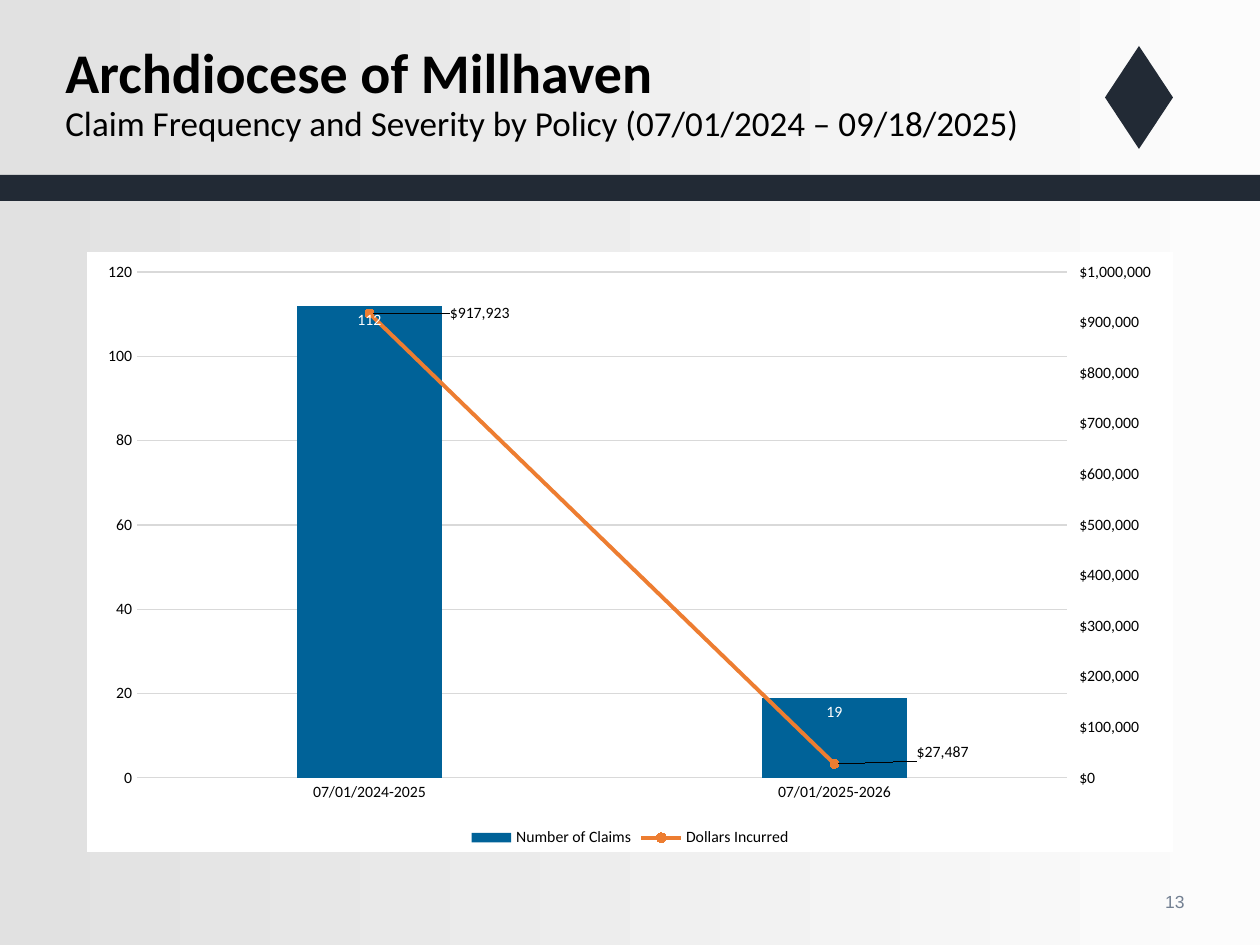
from pptx import Presentation
from pptx.chart.axis import ValueAxis
from pptx.chart.data import CategoryChartData
from pptx.dml.color import RGBColor
from pptx.enum.chart import (XL_CHART_TYPE, XL_LABEL_POSITION,
                             XL_LEGEND_POSITION, XL_MARKER_STYLE, XL_TICK_MARK)
from pptx.enum.shapes import MSO_SHAPE
from pptx.enum.text import MSO_ANCHOR, PP_ALIGN
from pptx.oxml import parse_xml
from pptx.oxml.ns import nsdecls, qn
from pptx.util import Pt

COLUMN = XL_CHART_TYPE.COLUMN_CLUSTERED
BOTTOM = XL_LEGEND_POSITION.BOTTOM
IN_END, RIGHT = XL_LABEL_POSITION.INSIDE_END, XL_LABEL_POSITION.RIGHT
NO_TICK, TICK_OUT = XL_TICK_MARK.NONE, XL_TICK_MARK.OUTSIDE
CIRCLE = XL_MARKER_STYLE.CIRCLE
RECT, DIAMOND = MSO_SHAPE.RECTANGLE, MSO_SHAPE.DIAMOND
MIDDLE, TO_RIGHT = MSO_ANCHOR.MIDDLE, PP_ALIGN.RIGHT

BLACK = RGBColor(0x00, 0x00, 0x00)
WHITE = RGBColor(0xFF, 0xFF, 0xFF)
NAVY = RGBColor(0x22, 0x2A, 0x35)
NUMBER = RGBColor(0x73, 0x80, 0x92)
GRID = RGBColor(0xD9, 0xD9, 0xD9)
BLUE = RGBColor(0x00, 0x62, 0x98)
ORANGE = RGBColor(0xED, 0x7D, 0x31)
SHADES = RGBColor(0xE1, 0xE1, 0xE1), RGBColor(0xFC, 0xFC, 0xFC)

PX = 914400 / 126
WIDE, HIGH = 1086, 600  # chart size in px
DOLLARS = '"$"#,##0'


def box(*sides):
    return [round(side * PX) for side in sides]


def style(font, size, color, name="Calibri", bold=False):
    font.size, font.name, font.bold = Pt(size), name, bold
    font.color.rgb = color


deck = Presentation()
deck.slide_width, deck.slide_height = box(1260, 945)
slide = deck.slides.add_slide(deck.slide_layouts[6])
shapes = slide.shapes

# Backdrop, header band and emblem
for kind, sides, color in (
    (RECT, (0, 0, 1260, 945), None),
    (RECT, (0, 175, 1260, 26), NAVY),
    (DIAMOND, (1105, 46, 68, 103), NAVY),
):
    shape = shapes.add_shape(kind, *box(*sides))
    shape.shadow.inherit = False
    shape.line.fill.background()
    if color is None:
        shape.fill.gradient()
        shape.fill.gradient_angle = 0
        for stop, shade in zip(shape.fill.gradient_stops, SHADES):
            stop.color.rgb = shade
    else:
        shape.fill.solid()
        shape.fill.fore_color.rgb = color

# Title and page number
frame = shapes.add_textbox(*box(53, 32, 1086, 125)).text_frame
frame.word_wrap = True
frame.vertical_anchor = MIDDLE
title = frame.paragraphs[0]
title.text = ("Archdiocese of Millhaven\n"
              "Claim Frequency and Severity by Policy (07/01/2024 – 09/18/2025)")
title.line_spacing = 0.9
head, sub = title.runs
style(head.font, 32, BLACK, bold=True)
style(sub.font, 20, BLACK)

frame = shapes.add_textbox(*box(1147, 885, 50, 34)).text_frame
frame.word_wrap = True
frame.vertical_anchor = MIDDLE
page = frame.paragraphs[0]
page.text = "13"
page.alignment = TO_RIGHT
style(page.runs[0].font, 10, NUMBER, "Arial")

# Chart: claim counts as columns, dollars as a line on the right axis
data = CategoryChartData()
data.categories = ["07/01/2024-2025", "07/01/2025-2026"]
data.add_series("Number of Claims", [112, 19], "General")
data.add_series("Dollars Incurred", [917923, 27487], DOLLARS)
chart = shapes.add_chart(COLUMN, *box(87, 252, WIDE, HIGH), data).chart
style(chart.font, 10, BLACK)
chart.has_title = False
chart.has_legend = True
chart.legend.position = BOTTOM
chart.legend.include_in_layout = False
style(chart.legend.font, 9, BLACK)

root = chart._chartSpace.chart
root.addnext(parse_xml(
    f'<c:spPr {nsdecls("c", "a")}><a:solidFill><a:srgbClr val="{WHITE}"/>'
    '</a:solidFill><a:ln><a:noFill/></a:ln></c:spPr>'))
area = root.plotArea
for old in area.findall(qn("c:layout")):
    area.remove(old)
area.insert(0, parse_xml(
    f'<c:layout {nsdecls("c")}><c:manualLayout><c:layoutTarget val="inner"/>'
    '<c:xMode val="edge"/><c:yMode val="edge"/>'
    f'<c:x val="{50 / WIDE}"/><c:y val="{20 / HIGH}"/>'
    f'<c:w val="{930 / WIDE}"/><c:h val="{506 / HIGH}"/>'
    '</c:manualLayout></c:layout>'))

bars = chart.plots[0]
bars.vary_by_categories = False
bars.gap_width, bars.overlap = 219, -27
count = bars.series[0]
count.format.fill.solid()
count.format.fill.fore_color.rgb = BLUE
labels = count.data_labels
labels.show_value = True
labels.position = IN_END
style(labels.font, 9, WHITE)

cats, left = chart.category_axis, chart.value_axis
line = parse_xml(
    f'<c:lineChart {nsdecls("c")}><c:grouping val="stacked"/>'
    '<c:varyColors val="0"/><c:marker val="1"/>'
    '<c:axId val="501"/><c:axId val="502"/></c:lineChart>')
moved = bars.series[1]._element
for flag in moved.findall(qn("c:invertIfNegative")):
    moved.remove(flag)
line.insert(2, moved)
area.find(qn("c:barChart")).addnext(line)

right = parse_xml(
    f'<c:valAx {nsdecls("c")}><c:axId val="502"/>'
    '<c:scaling><c:orientation val="minMax"/></c:scaling>'
    '<c:delete val="0"/><c:axPos val="r"/><c:tickLblPos val="nextTo"/>'
    '<c:crossAx val="501"/><c:crosses val="max"/></c:valAx>')
hidden = parse_xml(
    f'<c:catAx {nsdecls("c")}><c:axId val="501"/>'
    '<c:scaling><c:orientation val="minMax"/></c:scaling>'
    '<c:delete val="1"/><c:axPos val="b"/>'
    '<c:crossAx val="502"/><c:crosses val="autoZero"/></c:catAx>')
area.find(qn("c:valAx")).addnext(right)
right.addnext(hidden)

money = ValueAxis(right)
for axis, tick in (cats, NO_TICK), (left, NO_TICK), (money, TICK_OUT):
    axis.major_tick_mark, axis.minor_tick_mark = tick, NO_TICK
    style(axis.tick_labels.font, 9, BLACK)
    axis.format.line.fill.background()
for axis, top, step in (left, 120, 20), (money, 1000000, 100000):
    axis.minimum_scale, axis.maximum_scale, axis.major_unit = 0, top, step
money.tick_labels.number_format = DOLLARS
money.tick_labels.number_format_is_linked = False
left.has_major_gridlines = True
for rule in cats.format.line, left.major_gridlines.format.line:
    rule.color.rgb = GRID
    rule.width = Pt(0.75)

cost = chart.plots[1].series[0]
cost.smooth = False
cost.format.line.color.rgb = ORANGE
cost.format.line.width = Pt(2.25)
cost.marker.style, cost.marker.size = CIRCLE, 5
cost.marker.format.fill.solid()
cost.marker.format.fill.fore_color.rgb = ORANGE
cost.marker.format.line.color.rgb = ORANGE
labels = cost.data_labels
labels.show_value = True
labels.number_format = DOLLARS
labels.number_format_is_linked = False
labels.position = RIGHT
style(labels.font, 9, BLACK)
for spot, (x, y) in enumerate([(71, 0), (73, -12)]):
    label = cost.points[spot].data_label
    label.position = RIGHT
    style(label.font, 9, BLACK)
    mark = labels._element.findall(qn("c:dLbl"))[spot]
    mark.find(qn("c:idx")).addnext(parse_xml(
        f'<c:layout {nsdecls("c")}><c:manualLayout><c:x val="{x / WIDE}"/>'
        f'<c:y val="{y / HIGH}"/></c:manualLayout></c:layout>'))
labels._element.append(parse_xml(
    f'<c:extLst {nsdecls("c")}>'
    '<c:ext uri="{CE6537A1-D6FC-4f65-9D91-7224C49458BB}" xmlns:c15='
    '"http://schemas.microsoft.com/office/drawing/2012/chart">'
    '<c15:showLeaderLines val="0"/></c:ext></c:extLst>'))

deck.save("out.pptx")
